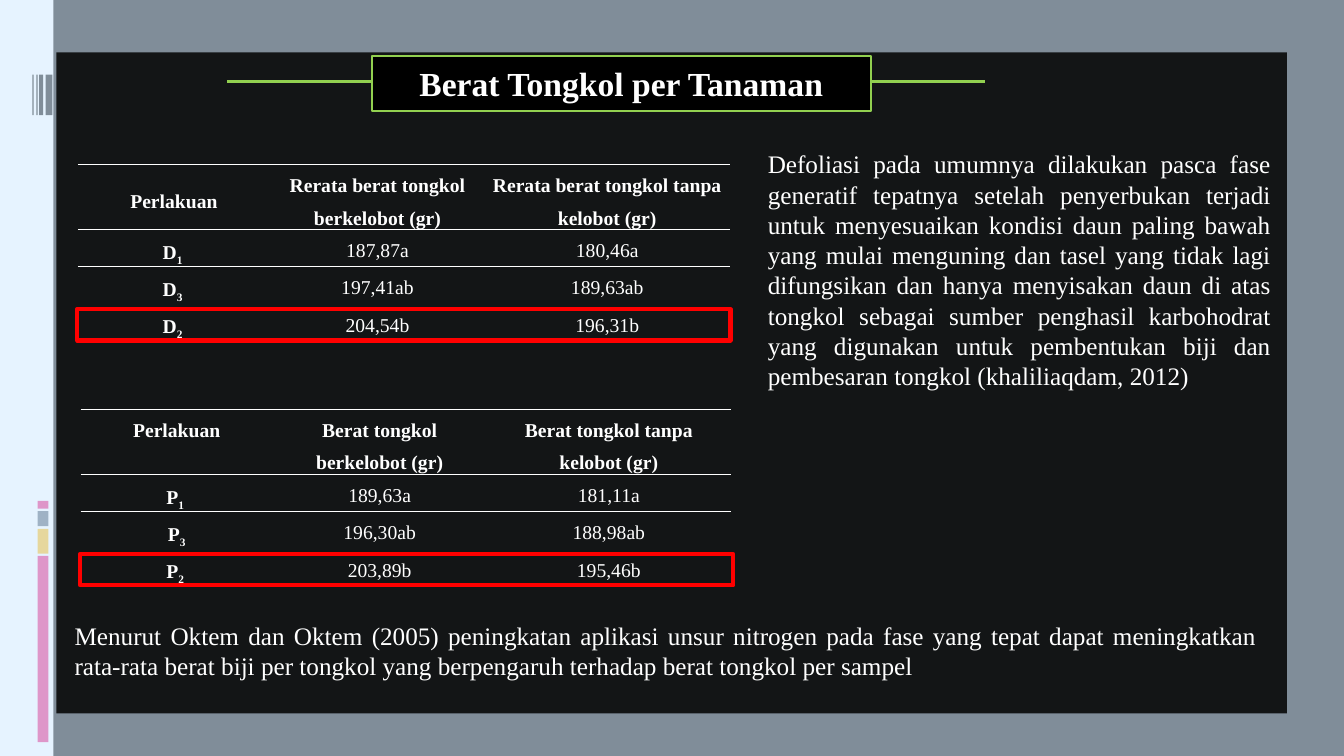
from pptx import Presentation
from pptx.dml.color import RGBColor
from pptx.enum.shapes import MSO_CONNECTOR, MSO_SHAPE
from pptx.enum.text import MSO_ANCHOR, MSO_AUTO_SIZE, PP_ALIGN
from pptx.oxml.ns import qn
from pptx.util import Cm, Pt
from lxml.etree import SubElement

BLACK = RGBColor(0x00, 0x00, 0x00)
WHITE = RGBColor(0xFF, 0xFF, 0xFF)
PINK = RGBColor(0xEA, 0x15, 0x7A)
YELLOW = RGBColor(0xFE, 0xB8, 0x0A)
SLATE = RGBColor(0x4E, 0x5B, 0x6F)
ICE = RGBColor(0xD6, 0xEC, 0xFF)
GREEN = RGBColor(0x92, 0xD0, 0x50)
RED = RGBColor(0xFF, 0x00, 0x00)
FONT = "Times New Roman"
NO_STYLE = "{2D5ABB26-0587-4C30-8999-92F81FD0307C}"

# Content
TITLE = "Berat Tongkol per Tanaman"
TABLES = [
    {"left": 1.96, "top": 4.14, "cols": (4.85, 5.41, 6.17), "anchor": MSO_ANCHOR.MIDDLE,
     "head": ("Perlakuan", "Rerata berat tongkol berkelobot (gr)",
              "Rerata berat tongkol tanpa kelobot (gr)"),
     "rows": [(("D", "1 "), "187,87a", "180,46a"),
              (("D", "3 "), "197,41ab", "189,63ab"),
              (("D", "2 "), "204,54b", "196,31b")]},
    {"left": 2.03, "top": 10.31, "cols": (4.85, 5.38, 6.17), "anchor": MSO_ANCHOR.TOP,
     "head": ("Perlakuan", "Berat tongkol berkelobot (gr)",
              "Berat tongkol tanpa kelobot (gr)"),
     "rows": [(("P", "1 "), "189,63a", "181,11a"),
              (("P", "3"), "196,30ab", "188,98ab"),
              (("P", "2 "), "203,89b", "195,46b")]},
]
NOTES = [
    ((19.1, 3.43, 13.18, 6.73),
     "Defoliasi pada umumnya dilakukan pasca fase generatif tepatnya setelah penyerbukan "
     "terjadi untuk menyesuaikan kondisi daun paling bawah yang mulai menguning dan tasel "
     "yang tidak lagi difungsikan dan hanya menyisakan daun di atas tongkol sebagai sumber "
     "penghasil karbohodrat yang digunakan untuk pembentukan biji dan pembesaran tongkol "
     "(khaliliaqdam, 2012)"),
    ((1.63, 15.21, 30.3, 2.36),
     "Menurut Oktem dan Oktem (2005) peningkatan aplikasi unsur nitrogen pada fase yang "
     "tepat dapat meningkatkan rata-rata berat biji per tongkol yang berpengaruh terhadap "
     "berat tongkol per sampel"),
]

# Layout, in cm
WIDTH, HEIGHT = 33.87, 19.05
HEAD_H, ROW_H = 1.64, 0.94
SIDE_BARS = [(14.01, 4.69, PINK), (13.33, 0.62, YELLOW), (12.88, 0.38, SLATE), (12.62, 0.2, PINK)]
BARCODE = [(1.15, 0.17), (0.99, 0.1), (0.92, 0.03), (0.82, 0.03)]

prs = Presentation()
prs.slide_width, prs.slide_height = Cm(WIDTH), Cm(HEIGHT)
s = prs.slides.add_slide(prs.slide_layouts[5])
s.background.fill.solid()
s.background.fill.fore_color.rgb = BLACK


def add_rect(box, fill=None, alpha=None, line=None, weight=1):
    sp = s.shapes.add_shape(MSO_SHAPE.RECTANGLE, *map(Cm, box))
    sp.shadow.inherit = False
    paint(sp, fill, line, weight)
    if alpha:
        color = sp.fill._xPr.find(qn("a:solidFill"))[0]
        SubElement(color, qn("a:alpha"), val=str(alpha * 1000))
    return sp


def paint(sp, fill, line, weight):
    if fill is None:
        sp.fill.background()
    else:
        sp.fill.solid()
        sp.fill.fore_color.rgb = fill
    if line is None:
        sp.line.fill.background()
    else:
        sp.line.color.rgb = line
        sp.line.width = Pt(weight)


def add_run(p, text, size, bold=False):
    r = p.add_run()
    r.text = text
    for name, value in {"name": FONT, "size": Pt(size), "bold": bold}.items():
        setattr(r.font, name, value)
    r.font.color.rgb = WHITE
    return r


def add_border(cell, side, weight):
    ln = SubElement(cell._tc.get_or_add_tcPr(), qn(f"a:{side}"), w=str(Pt(weight)))
    SubElement(SubElement(ln, qn("a:solidFill")), qn("a:srgbClr"), val=str(WHITE))


def fill_cell(cell, content, row, last, bold, anchor):
    frame = {"margin_left": Cm(0.19), "margin_right": Cm(0.19), "margin_top": 0,
             "margin_bottom": 0, "vertical_anchor": anchor}
    for name, value in frame.items():
        setattr(cell, name, value)
    if row < 2:
        add_border(cell, "lnT", 0.75 if row else 1)
    if row in (0, last):
        add_border(cell, "lnB", 0.75)
    cell.fill.background()
    p = cell.text_frame.paragraphs[0]
    p.alignment, p.line_spacing = PP_ALIGN.CENTER, 1.5
    base, *sub = (content,) if isinstance(content, str) else content
    add_run(p, base, 14, bold)
    for text in sub:
        add_run(p, text, 14, bold).font._element.set("baseline", "-25000")


def add_data_table(data):
    rows = [data["head"], *data["rows"]]
    last = len(rows) - 1
    left, top, cols = data["left"], data["top"], data["cols"]
    table = s.shapes.add_table(len(rows), len(cols), Cm(left), Cm(top), Cm(sum(cols)),
                               Cm(HEAD_H + last * ROW_H)).table
    table.first_row = table.horz_banding = False
    table._tbl.tblPr.find(qn("a:tableStyleId")).text = NO_STYLE
    for column, width in zip(table.columns, cols):
        column.width = Cm(width)
    for i, row in enumerate(rows):
        table.rows[i].height = Cm(ROW_H if i else HEAD_H)
        for j, content in enumerate(row):
            if i:
                anchor = MSO_ANCHOR.TOP
            else:
                anchor = MSO_ANCHOR.MIDDLE if j else data["anchor"]
            fill_cell(table.cell(i, j), content, i, last, i == 0 or j == 0, anchor)
    # Red frame around the last row
    add_rect((left - 0.01, top + 3.65, 16.46, 0.79), line=RED, weight=3)


# Side strip, veil and dark panel
add_rect((0, 0, 1.35, HEIGHT), WHITE)
for top, height, color in SIDE_BARS:
    add_rect((0.95, top, 0.27, height), color)
for left, width in BARCODE:
    add_rect((left, 1.88, width, 1.02), BLACK)
add_rect((0, 0, WIDTH, HEIGHT), ICE, alpha=60)
add_rect((1.42, 1.32, 31.01, 16.66), BLACK, alpha=85)

# Title on its green line
rule = s.shapes.add_connector(MSO_CONNECTOR.STRAIGHT, Cm(5.72), Cm(2.06), Cm(24.82), Cm(2.06))
rule.line.color.rgb = GREEN
rule.line.width = Pt(2.25)
SubElement(rule._element.spPr, qn("a:effectLst"))

title = s.shapes.title
s.shapes._spTree.append(title._element)
title.left, title.top, title.width, title.height = map(Cm, (9.37, 1.42, 12.57, 1.37))
paint(title, BLACK, GREEN, 1.5)
tf = title.text_frame
tf.auto_size, tf.vertical_anchor = MSO_AUTO_SIZE.NONE, MSO_ANCHOR.MIDDLE
tf.paragraphs[0].alignment = PP_ALIGN.CENTER
add_run(tf.paragraphs[0], TITLE, 24, True)

# Tables
for data in TABLES:
    add_data_table(data)

# Running text
for box, text in NOTES:
    tf = s.shapes.add_textbox(*map(Cm, box)).text_frame
    tf.word_wrap, tf.vertical_anchor = True, MSO_ANCHOR.MIDDLE
    tf.paragraphs[0].alignment = PP_ALIGN.JUSTIFY
    add_run(tf.paragraphs[0], text, 18)

prs.save("out.pptx")
